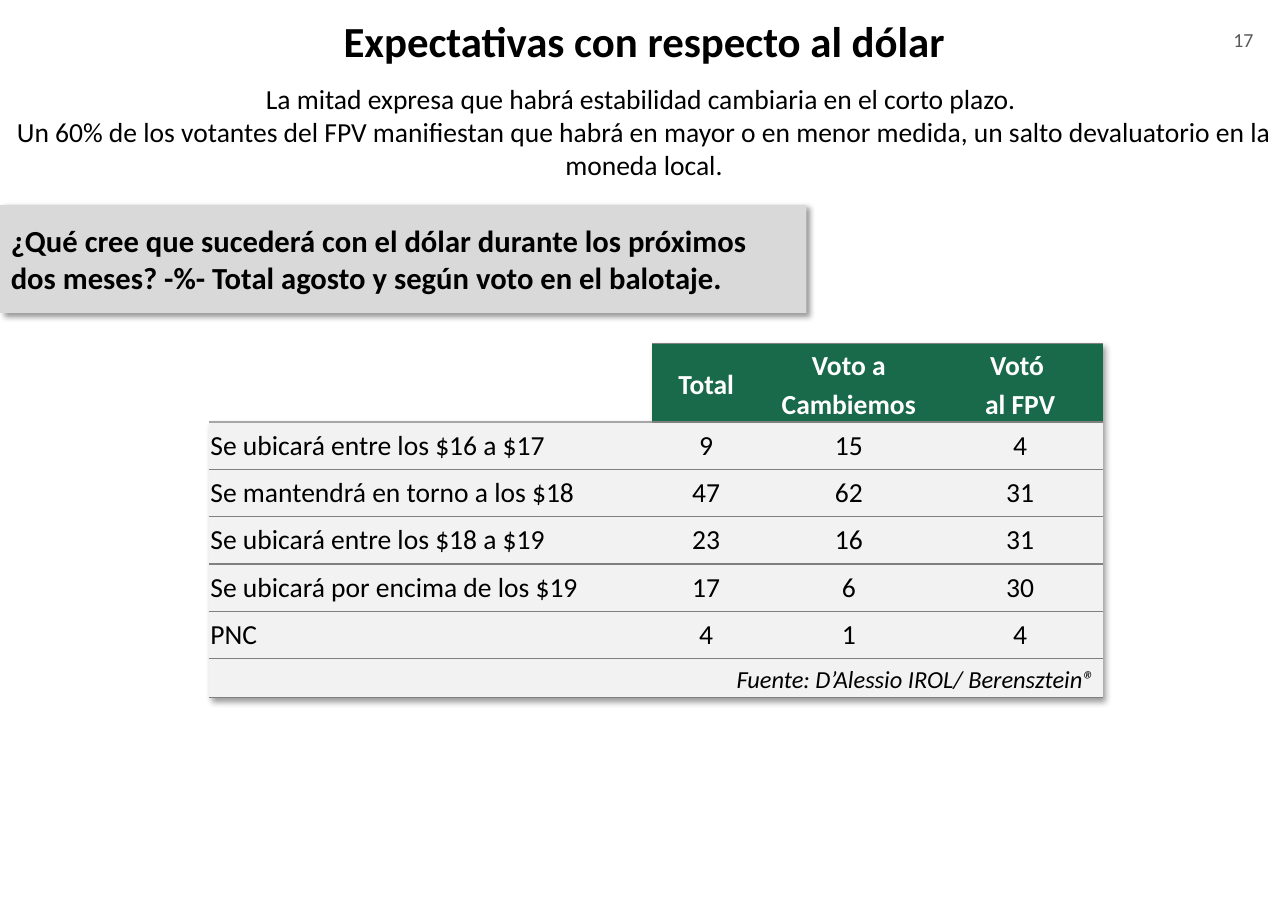
from dataclasses import dataclass
from typing import Any

from lxml import etree
from pptx import Presentation
from pptx.dml.color import RGBColor
from pptx.enum.shapes import MSO_SHAPE
from pptx.enum.text import MSO_ANCHOR, MSO_AUTO_SIZE, PP_ALIGN
from pptx.oxml import parse_xml
from pptx.oxml.ns import nsdecls, qn
from pptx.util import Emu, Inches, Pt

LEFT, MID, RIGHT = PP_ALIGN.LEFT, PP_ALIGN.CENTER, PP_ALIGN.RIGHT
TOP, CENTER = MSO_ANCHOR.TOP, MSO_ANCHOR.MIDDLE
FIXED = MSO_AUTO_SIZE.NONE
RECT = MSO_SHAPE.RECTANGLE
WIDE, HIGH = Inches(11.69), Inches(8.27)
PLAIN = "{2D5ABB26-0587-4C30-8999-92F81FD0307C}"


@dataclass(frozen=True)
class Theme:
    font: str = "Calibri"
    ink: str = "000000"
    white: str = "FFFFFF"
    gray: str = "595959"
    green: str = "19694B"
    pale: str = "F2F2F2"
    panel: str = "D9D9D9"
    rule: str = "808080"
    soft: str = "A6A6A6"
    head: int = 28
    ask: int = 20
    body: int = 18
    source: int = 16
    page: int = 13


@dataclass(frozen=True)
class Box:
    left: float
    top: float
    width: float
    height: float


@dataclass(frozen=True)
class Style:
    size: int
    color: str
    align: Any = MID
    bold: bool = False
    italic: bool = False
    lead: float = 1.0


THEME = Theme()
TITLE = Style(THEME.head, THEME.ink, bold=True)
PAGE = Style(THEME.page, THEME.gray)
BODY = Style(THEME.body, THEME.ink)
LABEL = Style(THEME.body, THEME.ink, LEFT)
ASK = Style(THEME.ask, THEME.ink, LEFT, bold=True)
HEAD = Style(THEME.body, THEME.white, bold=True, lead=1.15)
SOURCE = Style(THEME.source, THEME.ink, RIGHT, italic=True, lead=1.15)

GRID = Box(16.25, 37.73, 69.38, 39.06)
COLS = (34.39, 8.38, 13.77, 12.83)
ROWS = (8.59, *[5.2] * 5, 4.23)
NAMES = (("Total",), ("Voto a Cambiemos",), ("Votó ", "al FPV"))
DATA = (
    ("Se ubicará entre los $16 a $17", 9, 15, 4),
    ("Se mantendrá en torno a los $18", 47, 62, 31),
    ("Se ubicará entre los $18 a $19", 23, 16, 31),
    ("Se ubicará por encima de los $19", 17, 6, 30),
    ("PNC", 4, 1, 4),
)


def across(share: float) -> Emu:
    return Emu(round(WIDE * share / 100))


def down(share: float) -> Emu:
    return Emu(round(HIGH * share / 100))


def place(box: Box) -> tuple[Emu, Emu, Emu, Emu]:
    return across(box.left), down(box.top), across(box.width), down(box.height)


def write(frame: Any, lines: tuple[str, ...], style: Style) -> None:
    for spot, line in enumerate(lines):
        para = frame.add_paragraph() if spot else frame.paragraphs[0]
        para.alignment = style.align
        para.line_spacing = style.lead
        para.space_before = para.space_after = Pt(0)
        run = para.add_run()
        run.text = line
        font = run.font
        font.name, font.size = THEME.font, Pt(style.size)
        font.bold, font.italic = style.bold, style.italic
        font.color.rgb = RGBColor.from_string(style.color)


def fill_frame(shape: Any, lines: tuple[str, ...], style: Style, anchor: Any = CENTER) -> None:
    frame = shape.text_frame
    frame.word_wrap = True
    frame.auto_size = FIXED
    frame.vertical_anchor = anchor
    write(frame, lines, style)


def add_text(slide: Any, box: Box, lines: tuple[str, ...], style: Style, anchor: Any = CENTER) -> None:
    fill_frame(slide.shapes.add_textbox(*place(box)), lines, style, anchor)


def add_shade(owner: Any) -> None:
    for old in owner.findall(qn("a:effectLst")):
        owner.remove(old)
    shade = parse_xml(
        f'<a:effectLst {nsdecls("a")}><a:outerShdw blurRad="{Pt(4)}" dist="{Pt(3)}" '
        f'dir="2700000" algn="tl" rotWithShape="0"><a:srgbClr val="{THEME.ink}">'
        '<a:alpha val="40000"/></a:srgbClr></a:outerShdw></a:effectLst>'
    )
    style = owner.find(qn("a:tableStyleId"))
    if style is None:
        owner.append(shade)
    else:
        style.addprevious(shade)


def add_edge(cell: Any, side: str, color: str) -> None:
    props = cell._tc.get_or_add_tcPr()
    line = etree.SubElement(props, qn(f"a:ln{side}"), w=str(Pt(1)))
    solid = etree.SubElement(line, qn("a:solidFill"))
    etree.SubElement(solid, qn("a:srgbClr"), val=color)


def set_cell(cell: Any, lines: tuple[str, ...], style: Style, fill: str, top: str, gap: float) -> None:
    add_edge(cell, "T", top)
    add_edge(cell, "B", THEME.rule)
    cell.fill.solid()
    cell.fill.fore_color.rgb = RGBColor.from_string(fill)
    cell.vertical_anchor = CENTER
    cell.margin_left = cell.margin_right = across(gap)
    cell.margin_top = cell.margin_bottom = 0
    if lines:
        write(cell.text_frame, lines, style)


def add_grid(slide: Any) -> None:
    table = slide.shapes.add_table(len(ROWS), len(COLS), *place(GRID)).table
    table.first_row = table.horz_banding = False
    props = table._tbl.tblPr
    props.find(qn("a:tableStyleId")).text = PLAIN
    add_shade(props)
    for col, share in zip(table.columns, COLS):
        col.width = across(share)
    for row, share in zip(table.rows, ROWS):
        row.height = down(share)
    blank = table.cell(0, 0)
    add_edge(blank, "B", THEME.soft)
    blank.fill.background()
    for col, lines in enumerate(NAMES, 1):
        set_cell(table.cell(0, col), lines, HEAD, THEME.green, THEME.rule, 0.6)
    for row, values in enumerate(DATA, 1):
        for col, value in enumerate(values):
            style = BODY if col else LABEL
            top = THEME.soft if row == 1 and col == 0 else THEME.rule
            set_cell(table.cell(row, col), (str(value),), style, THEME.pale, top, 0.09)
    last = len(ROWS) - 1
    table.cell(last, 0).merge(table.cell(last, len(COLS) - 1))
    for col in range(len(COLS)):
        lines = () if col else ("Fuente: D’Alessio IROL/ Berensztein®",)
        set_cell(table.cell(last, col), lines, SOURCE, THEME.pale, THEME.rule, 0.6)


def add_panel(slide: Any, box: Box, lines: tuple[str, ...]) -> None:
    panel = slide.shapes.add_shape(RECT, *place(box))
    panel.shadow.inherit = False
    panel.fill.solid()
    panel.fill.fore_color.rgb = RGBColor.from_string(THEME.panel)
    panel.line.fill.background()
    add_shade(panel._element.spPr)
    fill_frame(panel, lines, ASK)


def main() -> None:
    deck = Presentation()
    deck.slide_width, deck.slide_height = WIDE, HIGH
    slide = deck.slides.add_slide(deck.slide_layouts[5])
    title = slide.shapes.title
    title.left, title.top, title.width, title.height = place(Box(0, 0, 100, 8.95))
    fill_frame(title, ("Expectativas con respecto al dólar",), TITLE)
    add_text(slide, Box(92.73, 2.42, 7.61, 5.32), ("17",), PAGE, TOP)
    add_text(slide, Box(0, 8.34, 100, 12.21), (
        "La mitad expresa que habrá estabilidad cambiaria en el corto plazo. ",
        "Un 60% de los votantes del FPV manifiestan que habrá en mayor o en menor medida, "
        "un salto devaluatorio en la moneda local.",
    ), BODY)
    add_grid(slide)
    add_panel(slide, Box(0, 22.49, 62.62, 11.85), (
        "¿Qué cree que sucederá con el dólar durante los próximos dos meses? "
        "-%- Total agosto y según voto en el balotaje.",
    ))
    deck.save("out.pptx")


if __name__ == "__main__":
    main()
